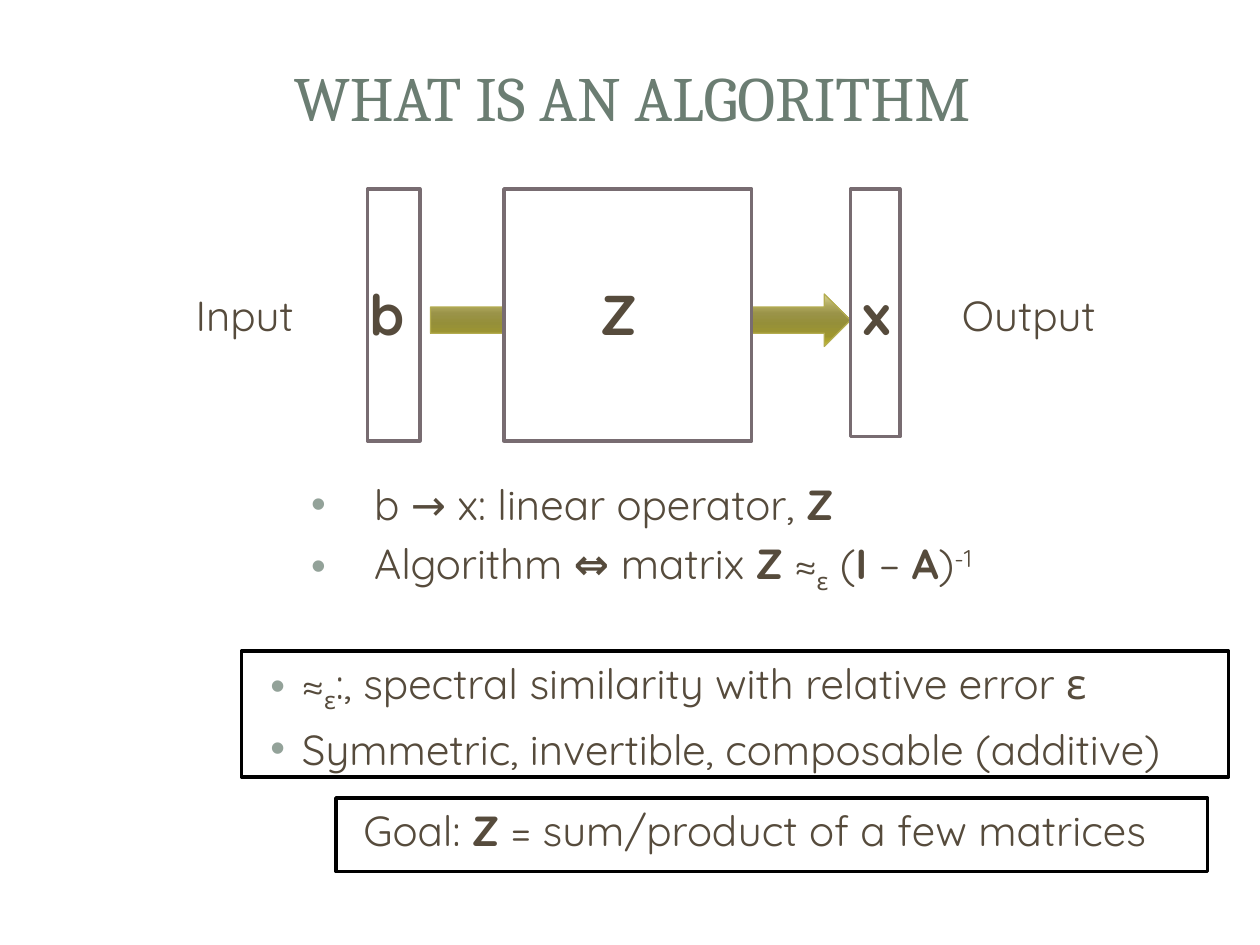
from dataclasses import dataclass

from lxml import etree
from pptx import Presentation
from pptx import util as u
from pptx.dml.color import RGBColor
from pptx.enum import shapes, text
from pptx.oxml import ns

COLS, ROWS = 120, 90


@dataclass(frozen=True)
class Theme:
    heading: str = "Cambria"
    body: str = "Quicksand"
    title_size: int = 36
    label_size: int = 32
    body_size: int = 24
    title: str = "6B7D72"
    ink: str = "564B3C"
    bullet: str = "93A299"
    outline: str = "786C71"
    frame: str = "000000"
    paper: str = "FFFFFF"
    arrow_line: str = "B3AC4F"
    arrow_stops: tuple = ((0, "D8D290"), (25, "AAA358"), (38, "9A9348"), (55, "958F39"),
                          (80, "9E962F"), (88, "ACA32C"), (100, "D0C53D"))


T = Theme()
BASELINES = {"sub": "-25000", "sup": "30000"}


def grid(prs, x, y, w, h):
    """Turn grid columns and rows into slide lengths."""
    cw, rh = prs.slide_width / COLS, prs.slide_height / ROWS
    return [round(v) for v in (x * cw, y * rh, w * cw, h * rh)]


def place(sp, box):
    sp.left, sp.top, sp.width, sp.height = box


def add(parent, tag, **attrs):
    return etree.SubElement(parent, ns.qn(tag), attrs)


def outline(sp, color, width=2):
    sp.line.color.rgb = RGBColor.from_string(color)
    sp.line.width = u.Pt(width)


def paint(sp, fill, line):
    sp.fill.solid()
    sp.fill.fore_color.rgb = RGBColor.from_string(fill)
    outline(sp, line)


def rectangle(s, box, line):
    sp = s.shapes.add_shape(shapes.MSO_SHAPE.RECTANGLE, *box)
    sp.shadow.inherit = False
    paint(sp, T.paper, line)
    return sp


def set_font(p, name, size, color, bold=None):
    p.font.name, p.font.size, p.font.bold = name, u.Pt(size), bold
    p.font.color.rgb = RGBColor.from_string(color)


def write(sp, lines, margin, hanging=0):
    """Fill a shape with lines of (text, style) runs; a hanging indent brings bullets."""
    tf = sp.text_frame
    tf.word_wrap = True
    tf.auto_size = text.MSO_AUTO_SIZE.NONE
    tf.vertical_anchor = text.MSO_ANCHOR.TOP
    for i, runs in enumerate(lines):
        p = tf.add_paragraph() if i else tf.paragraphs[0]
        p.alignment = text.PP_ALIGN.LEFT
        p.space_before = u.Pt(0.2 * T.body_size)
        pPr = p._p.get_or_add_pPr()
        pPr.set("marL", str(u.Inches(margin)))
        pPr.set("indent", str(-u.Inches(hanging)))
        if hanging:
            add(add(pPr, "a:buClr"), "a:srgbClr", val=T.bullet)
            add(pPr, "a:buFont", typeface="Arial")
            add(pPr, "a:buChar", char="•")
        set_font(p, T.body, T.body_size, T.ink)
        for words, style in runs:
            r = p.add_run()
            r.text = words
            if style == "bold":
                r.font.bold = True
            elif style:
                r._r.get_or_add_rPr().set("baseline", BASELINES[style])


def title(s, box, words):
    sp = s.shapes.title
    place(sp, box)
    tf = sp.text_frame
    tf.text = words
    tf.vertical_anchor = text.MSO_ANCHOR.TOP
    p = tf.paragraphs[0]
    p.alignment = text.PP_ALIGN.CENTER
    set_font(p, T.heading, T.title_size, T.title)


def bullet_list(sp, box, line, lines, margin, hanging):
    place(sp, box)
    paint(sp, T.paper, line)
    write(sp, lines, margin, hanging)


def note(s, box, line, runs):
    write(rectangle(s, box, line), [runs], margin=0.12)


def flow_arrow(s, box):
    sp = s.shapes.add_shape(shapes.MSO_SHAPE.RIGHT_ARROW, *box)
    sp.shadow.inherit = False
    outline(sp, T.arrow_line, 0.75)
    sp.fill.gradient()
    grad = sp._element.spPr.find(ns.qn("a:gradFill"))
    for child in list(grad):
        grad.remove(child)
    stops = add(grad, "a:gsLst")
    for pos, color in T.arrow_stops:
        add(add(stops, "a:gs", pos=str(pos * 1000)), "a:srgbClr", val=color)
    add(grad, "a:lin", ang="5400000", scaled="0")


def symbol(s, box, letter):
    tf = s.shapes.add_textbox(*box).text_frame
    tf.word_wrap = False
    tf.text = letter
    set_font(tf.paragraphs[0], T.body, T.label_size, T.ink, bold=True)


def operator_diagram(prs, s, x, y):
    """Input vector, operator matrix and output vector, from the given grid corner."""
    def at(dx, dy, w, h):
        return grid(prs, x + dx, y + dy, w, h)

    flow_arrow(s, at(25, 10, 40, 5))
    for letter, dx, w, h, label_dx in (("b", 19, 5, 24, 18), ("x", 65, 4.7, 23.6, 65),
                                       ("Z", 32, 23.6, 24, 40)):
        rectangle(s, at(dx, 0, w, h), T.outline)
        symbol(s, at(label_dx, 8, 5, 7.7), letter)
    for words, dx, w in (("Input", 0, 15), ("Output", 73, 18)):
        note(s, at(dx, 9, w, 6), T.paper, [(words, "")])


def algorithm_slide(prs):
    s = prs.slides.add_slide(prs.slide_layouts.get_by_name("Two Content"))
    title(s, grid(prs, 6, 5, 108.4, 13.7), "WHAT IS AN ALGORITHM")
    bullet_list(s.placeholders[1], grid(prs, 27, 45, 71, 12), T.paper, [
        [("b → x: linear operator, ", ""), ("Z", "bold")],
        [("Algorithm ", ""), ("⇔ ", "bold"), ("matrix ", ""), ("Z ", "bold"), ("≈", ""),
         ("ε", "sub"), (" (", ""), ("I ", "bold"), ("– ", ""), ("A", "bold"), (")", ""),
         ("-1", "sup")],
    ], margin=0.62, hanging=0.5)
    bullet_list(s.placeholders[2], grid(prs, 23, 62, 94, 12), T.frame, [
        [("≈", ""), ("ε", "sub"), (":, spectral similarity with relative error ε", "")],
        [("Symmetric, invertible, composable (additive)", "")],
    ], margin=0.38, hanging=0.25)
    operator_diagram(prs, s, 16, 18)
    note(s, grid(prs, 32, 76, 83, 7), T.frame,
         [("Goal: ", ""), ("Z ", "bold"), ("= sum/product of a few matrices", "")])


def main():
    prs = Presentation()
    prs.slide_width, prs.slide_height = u.Inches(10), u.Inches(7.5)
    algorithm_slide(prs)
    prs.save("out.pptx")


if __name__ == "__main__":
    main()
